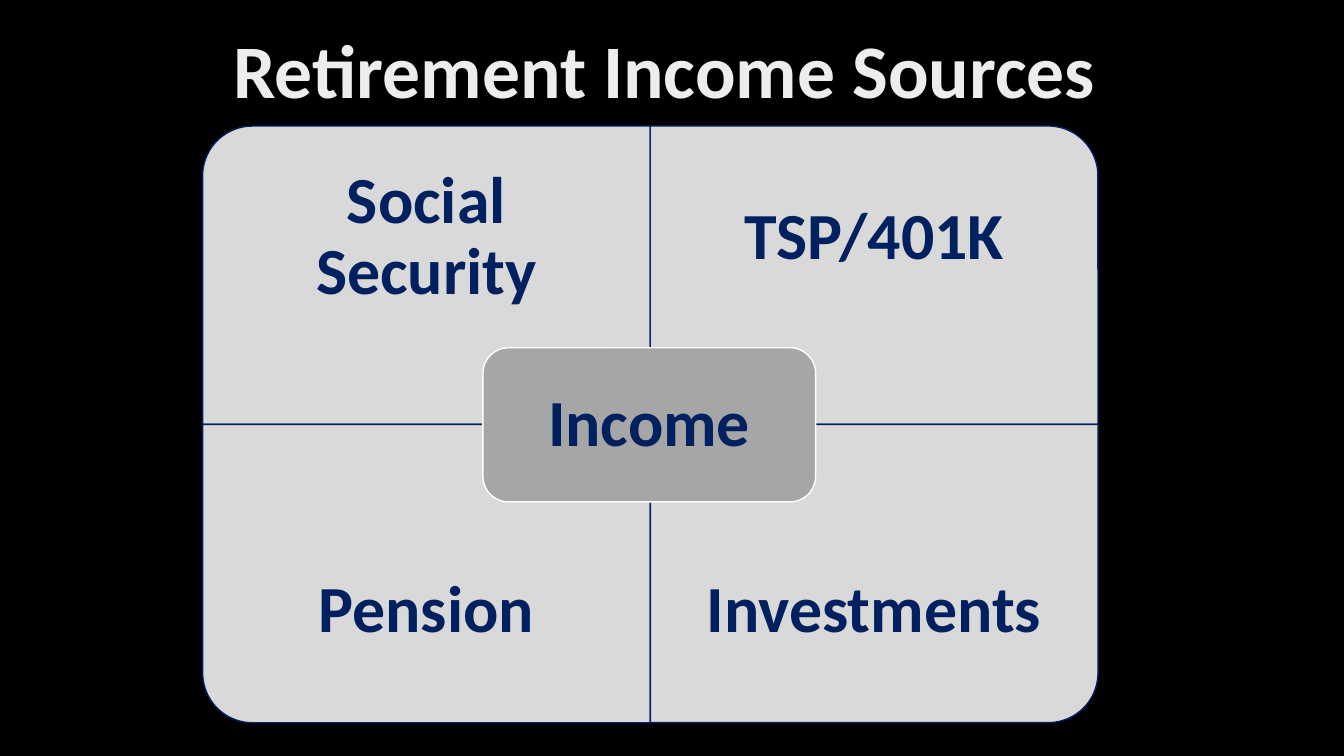
from dataclasses import dataclass

from lxml.etree import SubElement
from pptx import Presentation
from pptx.dml.color import RGBColor
from pptx.enum.shapes import MSO_SHAPE
from pptx.enum.text import MSO_ANCHOR, PP_ALIGN
from pptx.oxml.ns import qn
from pptx.shapes.autoshape import Shape
from pptx.shapes.shapetree import GroupShapes
from pptx.text.text import Font
from pptx.util import Pt

SCALE = 9144  # EMU per px, 100 px to the inch
NAVY, SILVER, GRAY, WHITE = "002060", "D9D9D9", "A6A6A6", "FFFFFF"
LEFT, TOP, WIDE, HIGH = 201, 125, 444, 296
TEXT_HIGH = 222


@dataclass
class Tile:
    text: str
    col: int
    row: int
    turn: int


TILES = [
    Tile("Social Security", 0, 0, 270),
    Tile("TSP/401K", 1, 0, 0),
    Tile("Pension", 0, 1, 180),
    Tile("Investments", 1, 1, 90),
]


def px(count: float) -> int:
    return round(count * SCALE)


def color(code: str) -> RGBColor:
    return RGBColor.from_string(code)


def paint(shape: Shape, fill: str, line: str) -> None:
    shape.shadow.inherit = False
    shape.fill.solid()
    shape.fill.fore_color.rgb = color(fill)
    shape.line.color.rgb = color(line)
    shape.line.width = Pt(1)


def write(shape: Shape, text: str, size: int, inset: int) -> Font:
    frame = shape.text_frame
    frame.text = text
    frame.word_wrap = True
    frame.vertical_anchor = MSO_ANCHOR.MIDDLE
    frame.margin_left = frame.margin_right = px(inset)
    frame.margin_top = frame.margin_bottom = px(inset)
    para = frame.paragraphs[0]
    para.alignment = PP_ALIGN.CENTER
    para.line_spacing = 0.9
    font = para.runs[0].font
    font.name, font.size, font.bold = "Calibri", Pt(size), True
    font.color.rgb = color(NAVY)
    return font


def shade(font: Font) -> None:
    """Give the title its three-stop silver gradient."""
    font.fill.gradient()
    font.fill.gradient_angle = 280  # counted anticlockwise, so 80 clockwise
    stops = font.fill.gradient_stops
    for stop, code, place in zip(stops, ("BFBFBF", WHITE), (0, 1)):
        stop.color.rgb = color(code)
        stop.position = place
    last = font._element.find(".//" + qn("a:gsLst"))[-1]
    middle = SubElement(last.getparent(), qn("a:gs"), pos="28000")
    SubElement(middle, qn("a:srgbClr"), val="EDEDED")
    last.addprevious(middle)


def draw(shapes: GroupShapes, tile: Tile) -> None:
    """Draw a quarter, turned so that its round corner points outward."""
    left, top = LEFT + tile.col * WIDE, TOP + tile.row * HIGH
    wide, high = (HIGH, WIDE) if tile.turn % 180 else (WIDE, HIGH)
    shape = shapes.add_shape(
        MSO_SHAPE.ROUND_1_RECTANGLE,
        px(left + (WIDE - wide) / 2), px(top + (HIGH - high) / 2),
        px(wide), px(high))
    shape.rotation = tile.turn
    paint(shape, SILVER, NAVY)
    drop = tile.row * (HIGH - TEXT_HIGH)
    box = shapes.add_textbox(px(left), px(top + drop), px(WIDE), px(TEXT_HIGH))
    write(box, tile.text, 47, 37)


def main() -> None:
    deck = Presentation()
    deck.slide_width, deck.slide_height = px(1333), px(750)
    slide = deck.slides.add_slide(deck.slide_layouts[6])
    slide.background.fill.solid()
    slide.background.fill.fore_color.rgb = color("000000")

    title = slide.shapes.add_textbox(px(84), px(1), px(1150), px(145))
    shade(write(title, "Retirement Income Sources", 54, 5))

    group = slide.shapes.add_group_shape().shapes
    for tile in TILES:
        draw(group, tile)
    hub = group.add_shape(
        MSO_SHAPE.ROUNDED_RECTANGLE, px(479), px(345), px(330), px(153))
    paint(hub, GRAY, WHITE)
    write(hub, "Income", 47, 28)

    deck.save("out.pptx")


if __name__ == "__main__":
    main()
